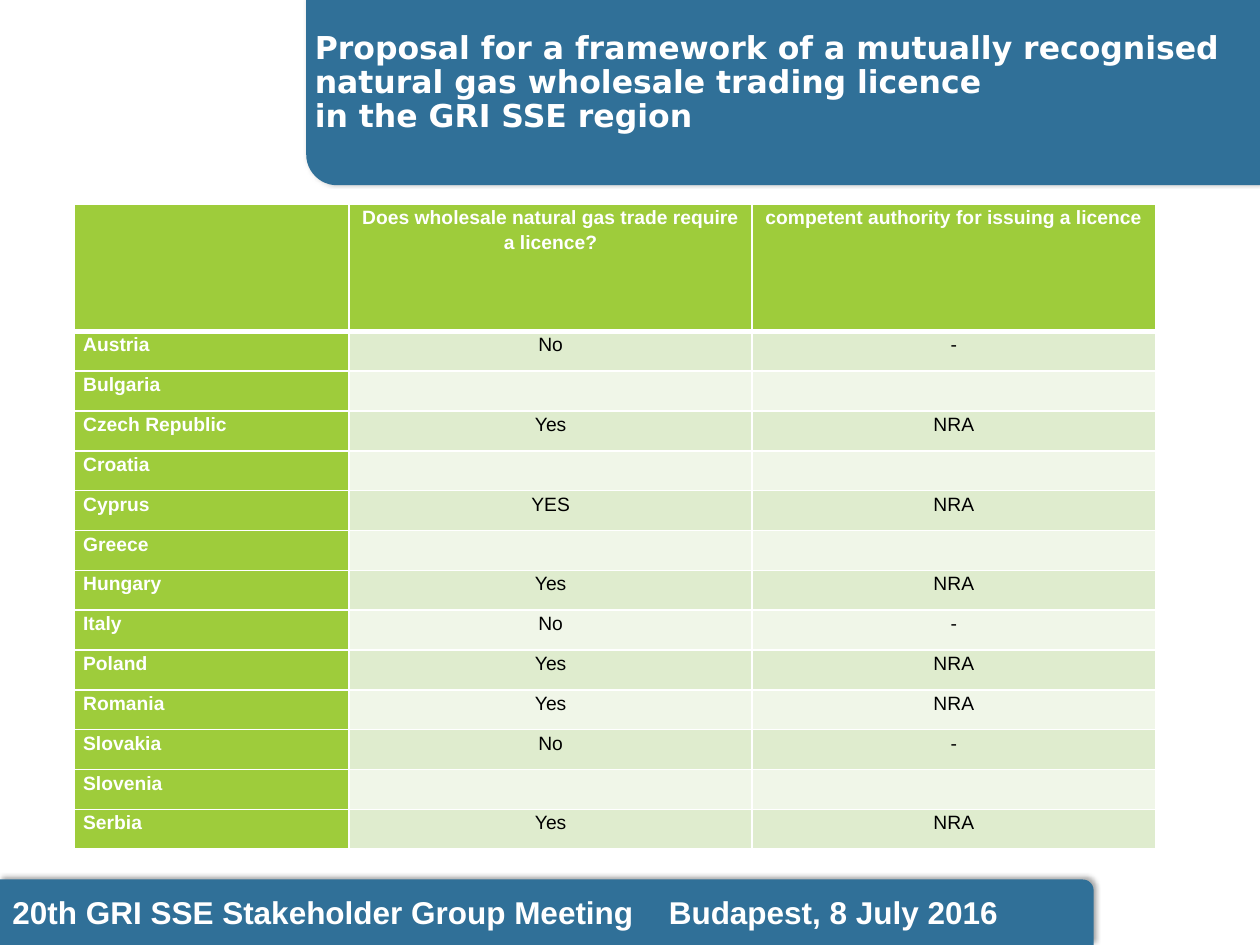
from dataclasses import dataclass

from lxml.etree import SubElement
from pptx import Presentation
from pptx.dml.color import RGBColor
from pptx.enum.shapes import MSO_SHAPE
from pptx.enum.text import MSO_ANCHOR, PP_ALIGN
from pptx.oxml import parse_xml
from pptx.oxml.ns import nsdecls, qn
from pptx.util import Inches, Pt


@dataclass(frozen=True)
class Theme:
    blue: str = "307098"
    green: str = "9ECC3B"
    band_dark: str = "DFECCE"
    band_light: str = "F0F6E8"
    white: str = "FFFFFF"
    black: str = "000000"
    heading_font: str = "DejaVu Sans"
    body_font: str = "Arial"
    heading_size: int = 18
    table_size: int = 11


theme = Theme()


def add_span(para, text, font, size, color, bold):
    span = para.add_run()
    span.text = text
    span.font.name = font
    span.font.size = Pt(size)
    span.font.bold = bold
    span.font.color.rgb = RGBColor.from_string(color)


def add_border(cell, side, width):
    line = SubElement(cell._tc.get_or_add_tcPr(), qn(f"a:{side}"), w=str(Pt(width)))
    fill = SubElement(line, qn("a:solidFill"))
    SubElement(fill, qn("a:srgbClr"), val=theme.white)


deck = Presentation()
deck.slide_width, deck.slide_height = Inches(10), Inches(7.5)
page = deck.slides.add_slide(deck.slide_layouts[6])

# Footer and header bands
for left, top, width, height, rotation in (
    (0, 6.98, 8.68, 0.52, 0),
    (2.43, 0, 7.57, 1.47, 180),
):
    band = page.shapes.add_shape(
        MSO_SHAPE.ROUND_1_RECTANGLE,
        Inches(left), Inches(top), Inches(width), Inches(height),
    )
    band.rotation = rotation
    band.fill.solid()
    band.fill.fore_color.rgb = RGBColor.from_string(theme.blue)
    band.line.fill.background()
    band._element.spPr.append(parse_xml(
        f'<a:effectLst {nsdecls("a")}>'
        f'<a:outerShdw blurRad="{Pt(3.1)}" dist="{Pt(1.8)}" dir="{306 * 60000}">'
        f'<a:srgbClr val="{theme.black}"><a:alpha val="35000"/></a:srgbClr>'
        '</a:outerShdw></a:effectLst>'
    ))

# Title
title_box = page.shapes.add_textbox(Inches(2.4), Inches(0.21), Inches(7.48), Inches(0.87))
title_box.text_frame.word_wrap = True
title_para = title_box.text_frame.paragraphs[0]
title_para.line_spacing = 0.9
title_style = (theme.heading_font, theme.heading_size, theme.white, True)
add_span(
    title_para,
    "Proposal for a framework of a mutually recognised natural gas wholesale trading licence",
    *title_style,
)
title_para.add_line_break()
add_span(title_para, "in the GRI SSE region", *title_style)

# Footer text, with a tab stop between event and date
footer_box = page.shapes.add_textbox(0, Inches(7.04), Inches(8.62), Inches(0.4))
footer_box.text_frame.word_wrap = True
footer_para = footer_box.text_frame.paragraphs[0]
tab_list = SubElement(footer_para._p.get_or_add_pPr(), qn("a:tabLst"))
SubElement(tab_list, qn("a:tab"), pos=str(Inches(5.21)), algn="l")
add_span(
    footer_para,
    "20th GRI SSE Stakeholder Group Meeting\tBudapest, 8 July 2016",
    theme.body_font, theme.heading_size, theme.white, True,
)

# Licence table
rows = [
    ("", "Does wholesale natural gas trade require a licence?",
     "competent authority for issuing a licence"),
    ("Austria", "No", "-"),
    ("Bulgaria", "", ""),
    ("Czech Republic", "Yes", "NRA"),
    ("Croatia", "", ""),
    ("Cyprus", "YES", "NRA"),
    ("Greece", "", ""),
    ("Hungary", "Yes", "NRA"),
    ("Italy", "No", "-"),
    ("Poland", "Yes", "NRA"),
    ("Romania", "Yes", "NRA"),
    ("Slovakia", "No", "-"),
    ("Slovenia", "", ""),
    ("Serbia", "Yes", "NRA"),
]
column_widths = (2.18, 3.2, 3.2)
table_height, header_height = 5.12, 1.01
row_height = (table_height - header_height) / (len(rows) - 1)

table = page.shapes.add_table(
    len(rows), len(column_widths),
    Inches(0.59), Inches(1.62), Inches(sum(column_widths)), Inches(table_height),
).table
table.horz_banding = False
for column, width in zip(table.columns, column_widths):
    column.width = Inches(width)

for row_index, row in enumerate(rows):
    is_header = row_index == 0
    table.rows[row_index].height = Inches(header_height if is_header else row_height)
    band_color = theme.band_dark if row_index % 2 else theme.band_light
    for column_index, text in enumerate(row):
        cell = table.cell(row_index, column_index)
        is_label = is_header or column_index == 0
        cell.margin_left = cell.margin_right = Inches(0.07)
        cell.margin_top = cell.margin_bottom = 0
        cell.vertical_anchor = MSO_ANCHOR.TOP
        for side in ("lnL", "lnR", "lnT", "lnB"):
            at_header_edge = (row_index, side) in ((0, "lnB"), (1, "lnT"))
            add_border(cell, side, 3 if at_header_edge else 1)
        cell.fill.solid()
        cell.fill.fore_color.rgb = RGBColor.from_string(
            theme.green if is_label else band_color
        )
        if text:
            para = cell.text_frame.paragraphs[0]
            para.alignment = PP_ALIGN.CENTER if column_index else PP_ALIGN.LEFT
            para.line_spacing = 1.15
            add_span(
                para, text, theme.body_font, theme.table_size,
                theme.white if is_label else theme.black, is_label,
            )

deck.save("out.pptx")
